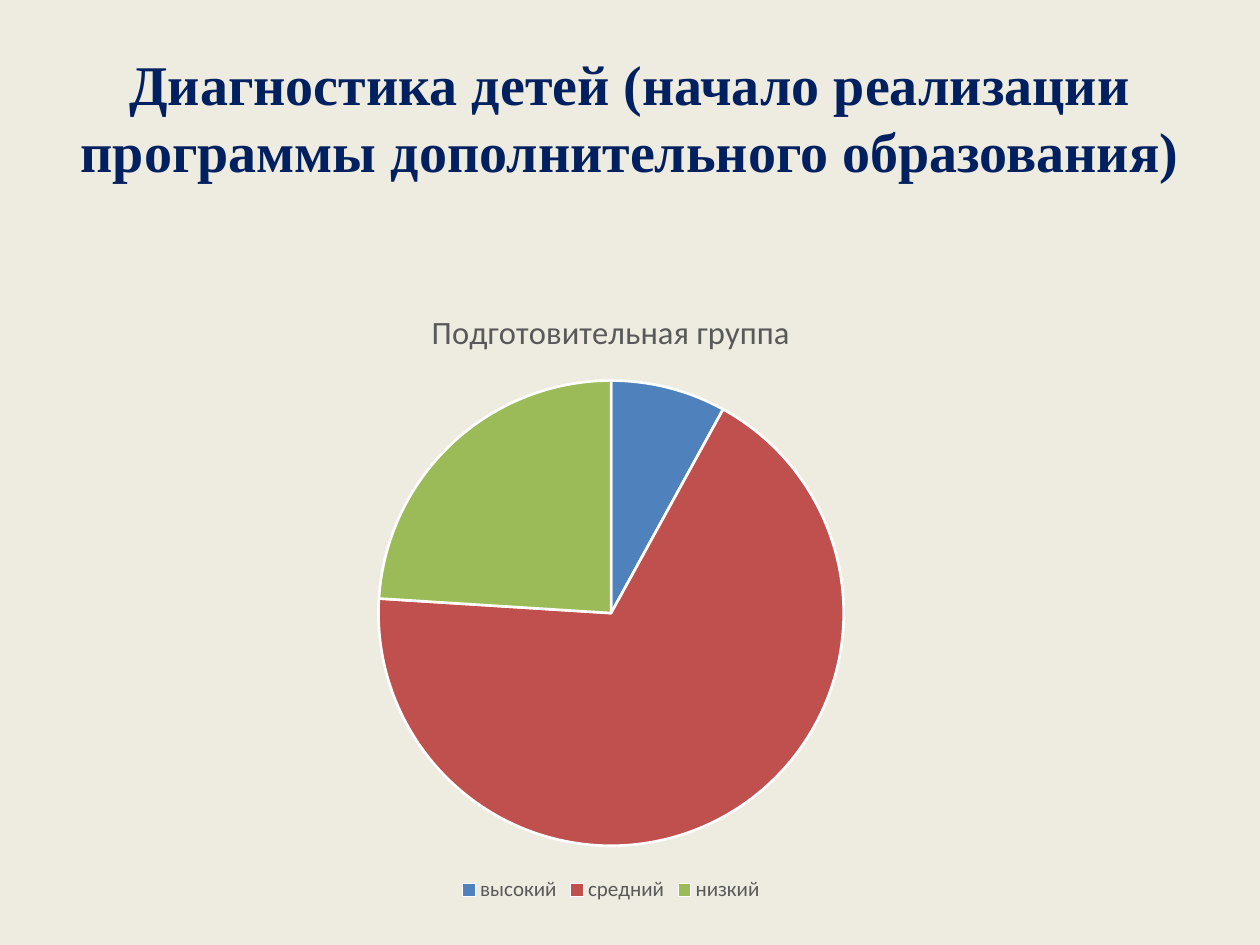
import pptx
import pptx.chart.data
import pptx.dml.color
import pptx.enum.chart
import pptx.enum.text
import pptx.util
from pptx.util import Cm

HUES = {
    "back": "EEECE1",
    "title": "002060",
    "text": "595959",
    "edge": "FFFFFF",
    "высокий": "4F81BD",
    "средний": "C0504D",
    "низкий": "9BBB59",
}
LEVELS = {"высокий": 8, "средний": 68, "низкий": 24}
GROUP = "Подготовительная группа"


def hue(name):
    return pptx.dml.color.RGBColor.from_string(HUES[name])


def style(font, face, size, name, bold=False):
    font.name = face
    font.size = pptx.util.Pt(size)
    font.bold = bold
    font.color.rgb = hue(name)


deck = pptx.Presentation()
deck.slide_width, deck.slide_height = Cm(25.4), Cm(19.05)
slide = deck.slides.add_slide(deck.slide_layouts[5])
slide.background.fill.solid()
slide.background.fill.fore_color.rgb = hue("back")

# Title
title = slide.shapes.title
title.left, title.top = Cm(1.27), Cm(0.76)
title.width, title.height = Cm(22.86), Cm(3.18)
frame = title.text_frame
frame.text = "Диагностика детей (начало реализации программы дополнительного образования)"
frame.word_wrap = True
frame.vertical_anchor = pptx.enum.text.MSO_ANCHOR.MIDDLE
line = frame.paragraphs[0]
line.alignment = pptx.enum.text.PP_ALIGN.CENTER
style(line.runs[0].font, "Times New Roman", 32, "title", True)

# Pie chart
data = pptx.chart.data.CategoryChartData()
data.categories = list(LEVELS)
data.add_series(GROUP, list(LEVELS.values()))
chart = slide.shapes.add_chart(
    pptx.enum.chart.XL_CHART_TYPE.PIE,
    Cm(0.89), Cm(5.72), Cm(22.86), Cm(12.57), data,
).chart
chart.font.name = "Calibri"
chart.font.size = pptx.util.Pt(10)

chart.has_title = True
head = chart.chart_title.text_frame
head.text = GROUP
style(head.paragraphs[0].runs[0].font, "Calibri", 18.6, "text")
chart.chart_title.include_in_layout = False

chart.has_legend = True
chart.legend.position = pptx.enum.chart.XL_LEGEND_POSITION.BOTTOM
chart.legend.include_in_layout = False
style(chart.legend.font, "Calibri", 12, "text")

pie = chart.plots[0]
pie.vary_by_categories = True
for i, level in enumerate(LEVELS):
    look = pie.series[0].points[i].format
    look.fill.solid()
    look.fill.fore_color.rgb = hue(level)
    look.line.color.rgb = hue("edge")
    look.line.width = pptx.util.Pt(1.5)

deck.save("out.pptx")
